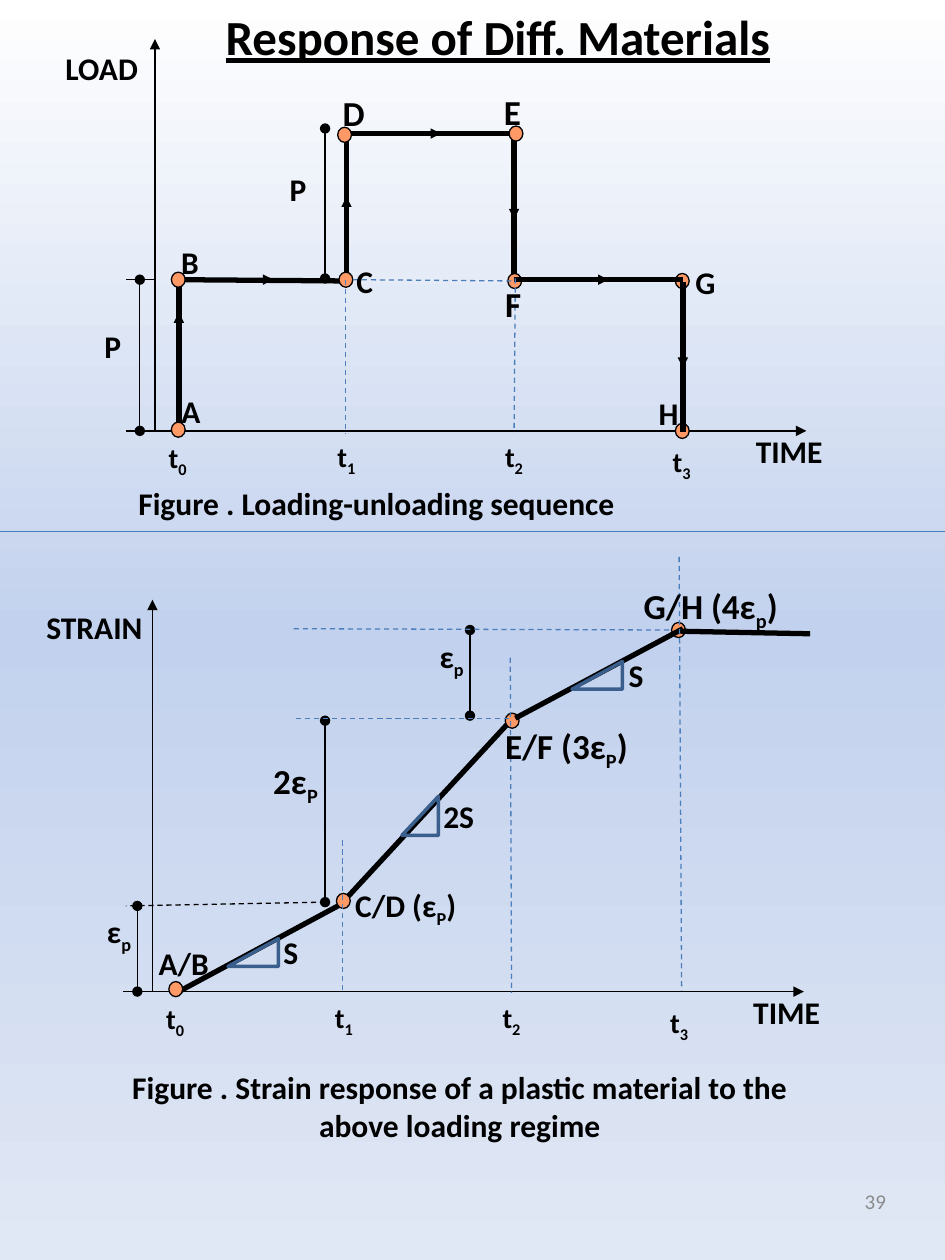
"""Build a slide with a loading sequence and the strain response of a plastic material."""
from copy import deepcopy

from lxml import etree
from pptx import Presentation
from pptx.dml.color import RGBColor
from pptx.enum.dml import MSO_LINE
from pptx.enum.shapes import MSO_CONNECTOR, MSO_SHAPE
from pptx.enum.text import MSO_ANCHOR, MSO_AUTO_SIZE, PP_ALIGN
from pptx.oxml.ns import qn
from pptx.util import Inches, Pt

BLACK = RGBColor(0x00, 0x00, 0x00)
WHITE = RGBColor(0xFF, 0xFF, 0xFF)
ORANGE = RGBColor(0xFF, 0x99, 0x66)
BLUE = RGBColor(0x4B, 0x7E, 0xBC)
NAVY = RGBColor(0x3A, 0x5F, 0x8C)
GREY = RGBColor(0x8C, 0x8C, 0x8C)
MIST = RGBColor(0xC2, 0xD1, 0xED)
PALE = RGBColor(0xE1, 0xE8, 0xF5)
DASH = MSO_LINE.DASH
STRAIGHT = MSO_CONNECTOR.STRAIGHT
OVAL = MSO_SHAPE.OVAL
WEDGE = MSO_SHAPE.RIGHT_TRIANGLE
LEFT, CENTER, RIGHT = PP_ALIGN.LEFT, PP_ALIGN.CENTER, PP_ALIGN.RIGHT
TOP, MIDDLE = MSO_ANCHOR.TOP, MSO_ANCHOR.MIDDLE
NO_FIT = MSO_AUTO_SIZE.NONE
TITLE_ONLY = 5

deck = Presentation()
deck.slide_width, deck.slide_height = Inches(7.5), Inches(10)
slide = deck.slides.add_slide(deck.slide_layouts[TITLE_ONLY])
shapes = slide.shapes


def text(words, left, top, width, height=0.4, size=18, bold=True, under=None,
         color=BLACK, align=LEFT, anchor=TOP, wrap=False, box=None):
    """Write words in a box; the letter after each underscore is a subscript."""
    box = box or shapes.add_textbox(0, 0, 0, 0)
    box.left, box.top = Inches(left), Inches(top)
    box.width, box.height = Inches(width), Inches(height)
    frame = box.text_frame
    frame.word_wrap, frame.auto_size = wrap, NO_FIT
    frame.vertical_anchor = anchor
    para = frame.paragraphs[0]
    para.alignment = align
    first, *rest = words.split("_")
    parts = [(first, False)]
    for part in rest:
        parts += [(part[0], True), (part[1:], False)]
    for part, low in parts:
        if part:
            run = para.add_run()
            run.text = part
            font = run.font
            font.name, font.size, font.bold = "Calibri", Pt(size), bold
            font.underline = under
            font.color.rgb = color
            if low:
                run._r.get_or_add_rPr().set("baseline", "-25000")


def line(x1, y1, x2, y2, color=BLACK, width=0.75, dash=None, head=None, tail=None):
    """Draw a straight line with optional end marks."""
    wire = shapes.add_connector(STRAIGHT, Inches(x1), Inches(y1), Inches(x2), Inches(y2))
    wire.line.color.rgb = color
    wire.line.width = Pt(width)
    if dash:
        wire.line.dash_style = dash
    props = wire.element.spPr
    for tag, mark in (("a:headEnd", head), ("a:tailEnd", tail)):
        if mark:
            etree.SubElement(props.find(qn("a:ln")), qn(tag)).set("type", mark)
    etree.SubElement(props, qn("a:effectLst"))


back = slide.background.fill
back.gradient()
back.gradient_angle = 270
stops = next(slide.element.iter(qn("a:gsLst")))
stops.append(deepcopy(stops[-1]))
for stop, place, color in zip(back.gradient_stops, (0, 0.5, 1), (WHITE, MIST, PALE)):
    stop.position = place
    stop.color.rgb = color

text("Response of Diff. Materials", 0.2, 0, 7.5, 0.57, size=28, under=True,
     align=CENTER, wrap=True, box=shapes.title)
text("39", 5.38, 9.27, 1.75, 0.53, size=12, bold=False, color=GREY,
     align=RIGHT, anchor=MIDDLE)
line(0, 4.22, 7.5, 4.22, color=BLUE)

for x, base, high in ((1.23, 3.42, 0.31), (1.21, 7.87, 4.76)):
    line(x, base, x + 5.17, base, tail="triangle")
    line(x, base, x, high, tail="triangle")
    line(x, base, x - 0.23, base)
    text("TIME", x + 4.67, base - 0.04, 0.74)
    for num, (step, drop) in enumerate(((0.01, 0.03), (1.35, 0.02), (2.68, 0.02), (4.01, 0.06))):
        text(f"t_{num}", x + step, base + drop, 0.35, 0.37, size=16)
line(1.23, 2.22, 1, 2.22)

for ends in ((1.42, 3.42, 1.42, 2.22), (1.42, 2.22, 2.75, 2.23), (2.75, 2.26, 2.75, 1.06),
             (2.75, 1.06, 4.08, 1.06), (4.08, 1.06, 4.08, 2.26),
             (1.4, 7.88, 2.72, 7.17), (2.73, 7.15, 4.08, 5.69)):
    line(*ends, width=3)

for ends in ((1.42, 2.75, 1.42, 2.48), (2.05, 2.22, 2.17, 2.22), (2.75, 1.83, 2.75, 1.56),
             (3.39, 1.06, 3.5, 1.06), (4.08, 1.38, 4.08, 1.74), (4.72, 2.22, 4.83, 2.22),
             (5.42, 2.57, 5.42, 2.92)):
    line(*ends, tail="triangle")

for ends in ((1.11, 2.22, 1.11, 3.42), (2.58, 1.02, 2.58, 2.21), (1.09, 7.19, 1.09, 7.87),
             (2.58, 7.16, 2.58, 5.72), (3.73, 5, 3.73, 5.68)):
    line(*ends, head="oval", tail="oval")

for x, y in ((1.36, 3.35), (1.36, 2.16), (2.69, 2.16), (2.68, 1.01), (4.04, 1), (4.03, 2.17),
             (5.36, 2.17), (5.36, 3.36), (1.34, 7.79), (2.67, 7.09), (4.01, 5.66), (5.33, 4.94)):
    dot = shapes.add_shape(OVAL, Inches(x), Inches(y), Inches(0.11), Inches(0.12))
    dot.shadow.inherit = False
    dot.fill.solid()
    dot.fill.fore_color.rgb = ORANGE
    dot.line.color.rgb = BLACK
    dot.line.width = Pt(0.75)

for ends in ((4.08, 2.22, 5.42, 2.22), (5.42, 2.24, 5.42, 3.43),
             (4.09, 5.7, 5.42, 4.99), (5.4, 5.01, 6.43, 5.03)):
    line(*ends, width=3)

for ends in ((2.74, 2.22, 2.74, 3.44), (2.8, 2.22, 4.08, 2.23), (4.09, 2.21, 4.08, 3.43),
             (2.72, 6.67, 2.72, 7.88), (2.35, 5.7, 4.04, 5.7), (5.31, 5, 2.32, 4.99),
             (4.05, 5.22, 4.06, 7.88), (5.39, 4.42, 5.41, 7.86)):
    line(*ends, color=BLUE, dash=DASH)
line(2.58, 7.16, 1, 7.19, dash=DASH)

for x, y, wide, high in ((1.81, 7.45, 0.4, 0.22), (4.54, 5.25, 0.4, 0.22),
                         (3.19, 6.32, 0.29, 0.31)):
    slope = shapes.add_shape(WEDGE, Inches(x), Inches(y), Inches(wide), Inches(high))
    slope.shadow.inherit = False
    slope.fill.background()
    slope.line.color.rgb = NAVY
    slope.line.width = Pt(2)
    slope.element.spPr.find(qn("a:xfrm")).set("flipH", "1")

for words, x, y, wide in (
        ("LOAD", 0.42, 0.34, 0.78), ("P", 0.73, 2.55, 0.34), ("P", 2.2, 1.3, 0.34),
        ("A", 1.34, 3.06, 0.35), ("B", 1.34, 1.88, 0.34), ("C", 2.73, 2.03, 0.34),
        ("G", 5.42, 2.04, 0.36), ("H", 5.13, 3.08, 0.36), ("STRAIN", 0.27, 4.78, 0.97),
        ("A/B", 1.16, 7.44, 0.61), ("C/D (ε_P)", 2.72, 6.98, 1.22), ("ε_p", 0.75, 7.19, 0.4),
        ("ε_p", 3.39, 5.01, 0.4), ("S", 2.15, 7.36, 0.35), ("S", 4.89, 5.16, 0.35),
        ("2S", 3.42, 6.28, 0.46)):
    text(words, x, y, wide)

for words, x, y, wide, high in (
        ("D", 2.62, 0.68, 0.52, 0.44), ("E", 3.9, 0.67, 0.52, 0.44), ("F", 3.91, 2.19, 0.52, 0.44),
        ("E/F (3ε_P)", 3.91, 5.7, 1.25, 0.77), ("G/H (4ε_p)", 5.01, 4.59, 1.32, 0.44),
        ("2ε_P", 2.07, 5.98, 0.68, 0.77)):
    text(words, x, y, wide, high, size=20, wrap=True)

text("Figure . Loading-unloading sequence", 1, 3.79, 6.5, wrap=True)
text("Figure . Strain response of a plastic material to the above loading regime",
     0.77, 8.43, 5.76, 0.71, align=CENTER, wrap=True)

deck.save("out.pptx")
